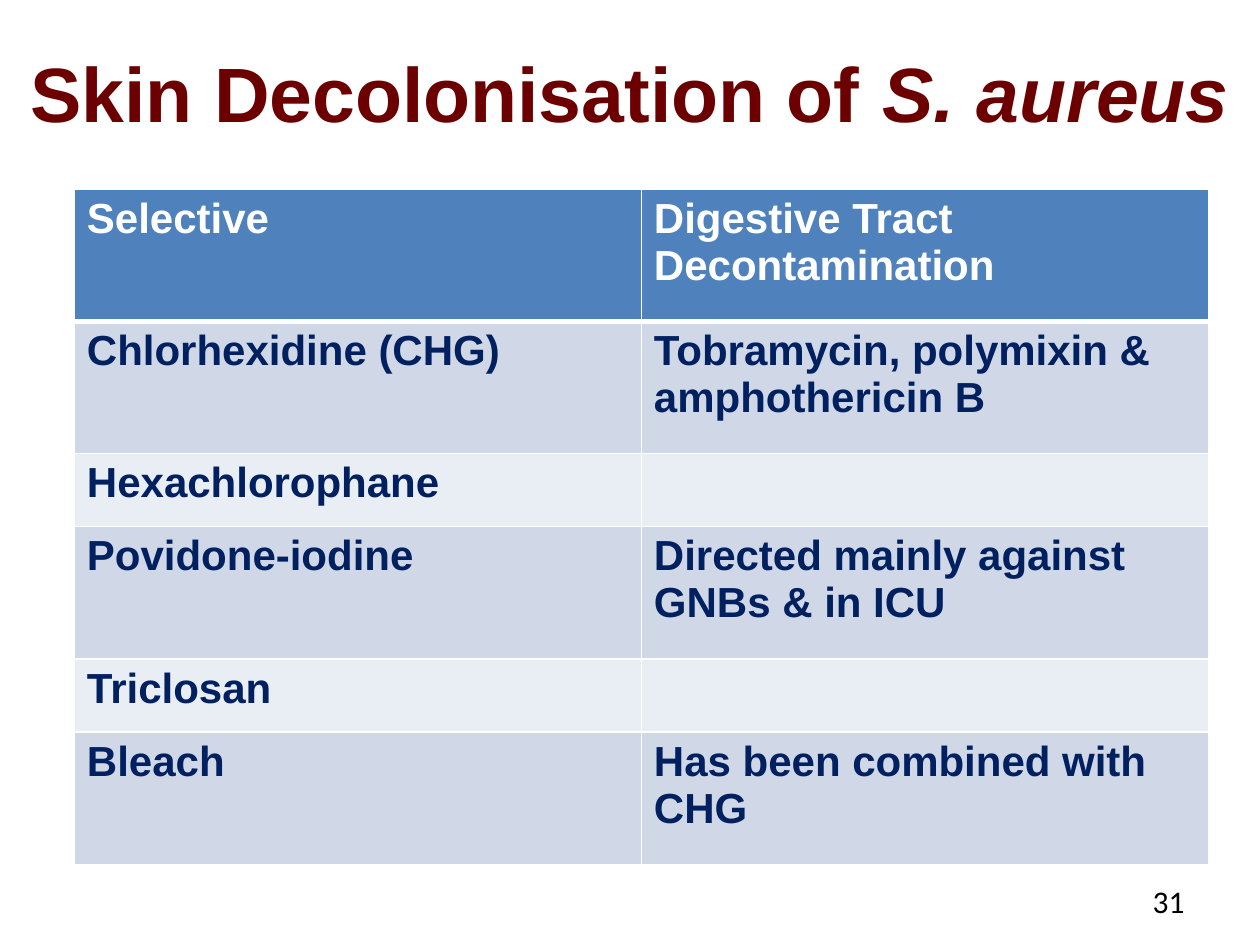
import pptx
import pptx.dml.color
import pptx.enum.text
import pptx.oxml
import pptx.oxml.ns
import pptx.util

Inches = pptx.util.Inches
Align = pptx.enum.text.PP_ALIGN

TREATMENTS = [
    ("Selective", "Digestive Tract Decontamination"),
    ("Chlorhexidine (CHG)", "Tobramycin, polymixin & amphothericin B"),
    ("Hexachlorophane", ""),
    ("Povidone-iodine", "Directed mainly against GNBs & in ICU"),
    ("Triclosan", ""),
    ("Bleach", "Has been combined with CHG"),
]


def color(value):
    return pptx.dml.color.RGBColor.from_string(value)


def add_text(paragraph, text, *, size, fill, font="Arial", bold=False, italic=False, align=Align.LEFT):
    paragraph.alignment = align
    run = paragraph.add_run()
    run.text = text
    run.font.name = font
    run.font.size = pptx.util.Pt(size)
    run.font.bold = bold
    run.font.italic = italic
    run.font.color.rgb = color(fill)


def add_text_box(slide, left, top, width, height):
    shape = slide.shapes.add_textbox(Inches(left), Inches(top), Inches(width), Inches(height))
    shape.text_frame.word_wrap = True
    shape.text_frame.vertical_anchor = pptx.enum.text.MSO_ANCHOR.MIDDLE
    return shape.text_frame.paragraphs[0]


def set_borders(cell, widths):
    properties = cell._tc.get_or_add_tcPr()
    for position, (side, width) in enumerate(widths.items()):
        line = pptx.oxml.parse_xml(
            f'<a:{side} {pptx.oxml.ns.nsdecls("a")} w="{pptx.util.Pt(width)}">'
            f'<a:solidFill><a:srgbClr val="FFFFFF"/></a:solidFill></a:{side}>'
        )
        properties.insert(position, line)


def add_treatment_table(slide):
    frame = slide.shapes.add_table(
        len(TREATMENTS), 2, Inches(0.59), Inches(1.5), Inches(9), Inches(5.35)
    )
    table = frame.table
    for row_index, texts in enumerate(TREATMENTS):
        header = row_index == 0
        table.rows[row_index].height = Inches(1.05 if texts[1] else 0.58)
        band = "4F81BD" if header else "D0D8E8" if row_index % 2 else "E9EDF4"
        borders = {
            "lnL": 1,
            "lnR": 1,
            "lnT": 3 if row_index == 1 else 1,
            "lnB": 3 if header else 1,
        }
        for column_index, text in enumerate(texts):
            cell = table.cell(row_index, column_index)
            cell.fill.solid()
            cell.fill.fore_color.rgb = color(band)
            set_borders(cell, borders)
            if text:
                add_text(
                    cell.text_frame.paragraphs[0],
                    text,
                    size=24,
                    fill="FFFFFF" if header else "002060",
                    bold=True,
                )


def main():
    presentation = pptx.Presentation()
    presentation.slide_width = Inches(10)
    presentation.slide_height = Inches(7.5)
    slide = presentation.slides.add_slide(presentation.slide_layouts[6])

    title = add_text_box(slide, 0, 0.3, 10, 0.85)
    for text, italic in (("Skin Decolonisation of ", False), ("S. aureus", True)):
        add_text(title, text, size=44, fill="6C0000", bold=True, italic=italic, align=Align.CENTER)

    add_treatment_table(slide)

    page_number = add_text_box(slide, 7.17, 6.95, 2.33, 0.4)
    add_text(page_number, "31", size=18, fill="000000", font="Calibri", align=Align.RIGHT)

    presentation.save("out.pptx")


if __name__ == "__main__":
    main()
